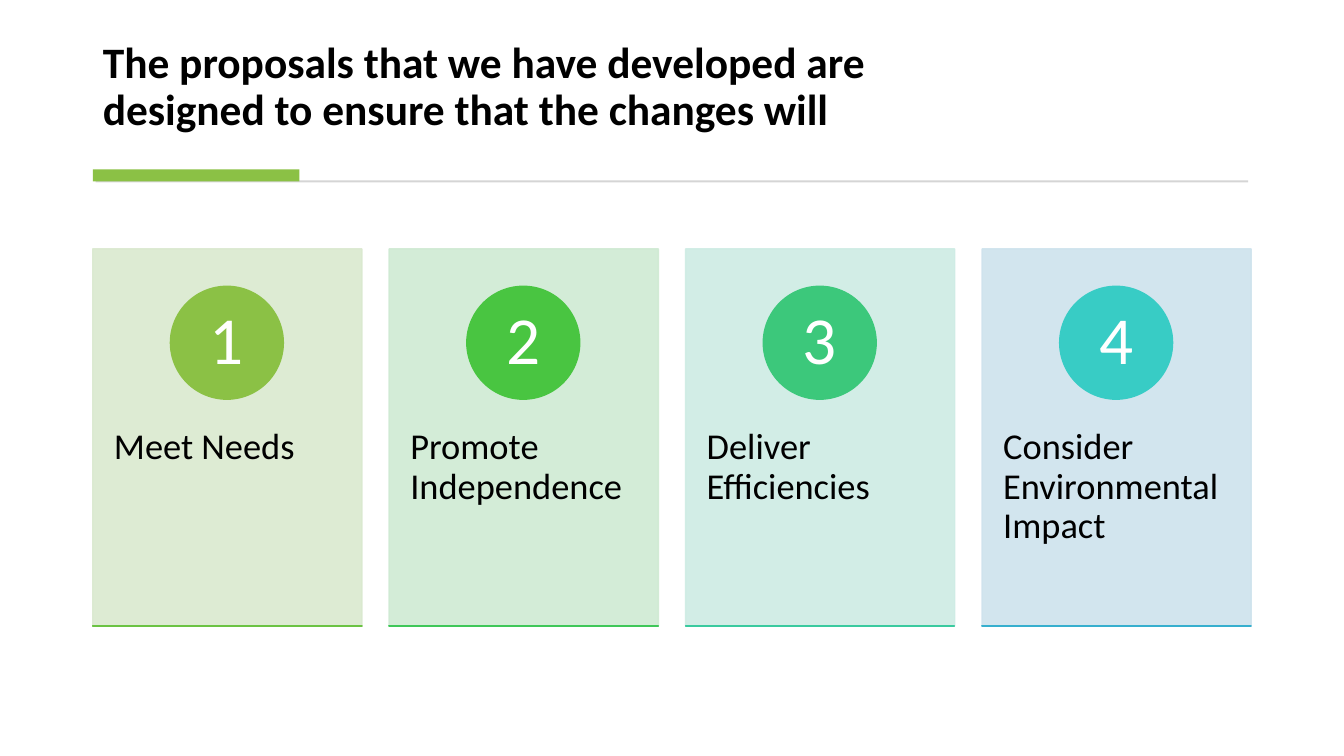
from lxml.etree import SubElement
from pptx import Presentation
from pptx.dml.color import RGBColor
from pptx.enum.shapes import MSO_SHAPE
from pptx.enum.text import MSO_ANCHOR, MSO_AUTO_SIZE, PP_ALIGN
from pptx.oxml.ns import qn
from pptx.util import Emu, Pt

PX = 9144
FONT = "Calibri"
BLACK, WHITE = "000000", "FFFFFF"
PROPOSALS = [
    ("Meet Needs", "DAE9CF", "8BC145", "6BC343"),
    ("Promote Independence", "CFEAD3", "49C541", "3FC759"),
    ("Deliver Efficiencies", "CEECE4", "3CC87B", "3ACA9F"),
    ("Consider Environmental Impact", "CEE3ED", "38CCC5", "36AFCE"),
]


def px(length):
    return Emu(length * PX)


def paint(color_format, color, opacity=100):
    color_format.rgb = RGBColor.from_string(color)
    if opacity < 100:
        rgb = color_format._xFill.find(qn("a:srgbClr"))
        SubElement(rgb, qn("a:alpha")).set("val", str(opacity * 1000))


def add_block(shapes, preset, box, color, outlined=False, opacity=100):
    block = shapes.add_shape(preset, *map(px, box))
    block.shadow.inherit = False
    block.fill.solid()
    paint(block.fill.fore_color, color, opacity)
    if outlined:
        block.line.width = Pt(1)
        block.line.fill.solid()
        paint(block.line.color, color)
        if opacity < 100:
            rgb = block.line._ln.find(".//" + qn("a:srgbClr"))
            SubElement(rgb, qn("a:alpha")).set("val", str(opacity * 1000))
    else:
        block.line.fill.background()
    return block


def write(frame, text, size, color, anchor, align, margins, bold=False):
    frame.text = text
    frame.word_wrap = True
    frame.auto_size = MSO_AUTO_SIZE.NONE
    frame.vertical_anchor = anchor
    frame.margin_left = frame.margin_right = px(margins[0])
    frame.margin_top = frame.margin_bottom = px(margins[1])
    paragraph = frame.paragraphs[0]
    paragraph.alignment = align
    paragraph.line_spacing = 0.9
    paragraph.font.name = FONT
    paragraph.font.size = Pt(size)
    paragraph.font.bold = bold
    paint(paragraph.font.color, color)


def add_header(slide, left, top, width):
    heading = slide.shapes.title
    heading.left, heading.top = px(left), px(top)
    heading.width, heading.height = px(923), px(111)
    write(heading.text_frame,
          "The proposals that we have developed are designed to ensure that the changes will",
          31, BLACK, MSO_ANCHOR.BOTTOM, PP_ALIGN.LEFT, (10, 5), bold=True)
    add_block(slide.shapes, MSO_SHAPE.RECTANGLE, (left + 3, top + 151, width - 6, 2), "D5D5D5")
    add_block(slide.shapes, MSO_SHAPE.RECTANGLE, (left, top + 140, 205, 12), "8BC145")


def add_card(slide, box, number, label, tint, accent, base):
    left, top, width, height = box
    card = slide.shapes.add_group_shape().shapes
    add_block(card, MSO_SHAPE.RECTANGLE, box, tint, outlined=True, opacity=90)
    caption = card.add_textbox(px(left), px(top + 142), px(width), px(225))
    write(caption.text_frame, label, 26, BLACK, MSO_ANCHOR.TOP, PP_ALIGN.LEFT, (21, 36))
    diameter = 112
    badge = add_block(card, MSO_SHAPE.OVAL,
                      (left + (width - diameter) // 2, top + 37, diameter, diameter),
                      accent, outlined=True)
    write(badge.text_frame, str(number), 48, WHITE, MSO_ANCHOR.MIDDLE, PP_ALIGN.CENTER, (9, 1))
    add_block(card, MSO_SHAPE.RECTANGLE, (left, top + height, width, 0), base, outlined=True)


def add_cards(slide, left, top, width, height):
    gap = 27
    card_width = (width - gap * (len(PROPOSALS) - 1)) // len(PROPOSALS)
    for index, proposal in enumerate(PROPOSALS):
        card_left = left + index * (card_width + gap)
        add_card(slide, (card_left, top, card_width, height), index + 1, *proposal)


def main():
    deck = Presentation()
    deck.slide_width, deck.slide_height = px(1333), px(750)
    slide = deck.slides.add_slide(deck.slide_layouts[5])
    add_header(slide, 92, 28, 1149)
    add_cards(slide, 92, 247, 1149, 374)
    deck.save("out.pptx")


if __name__ == "__main__":
    main()
